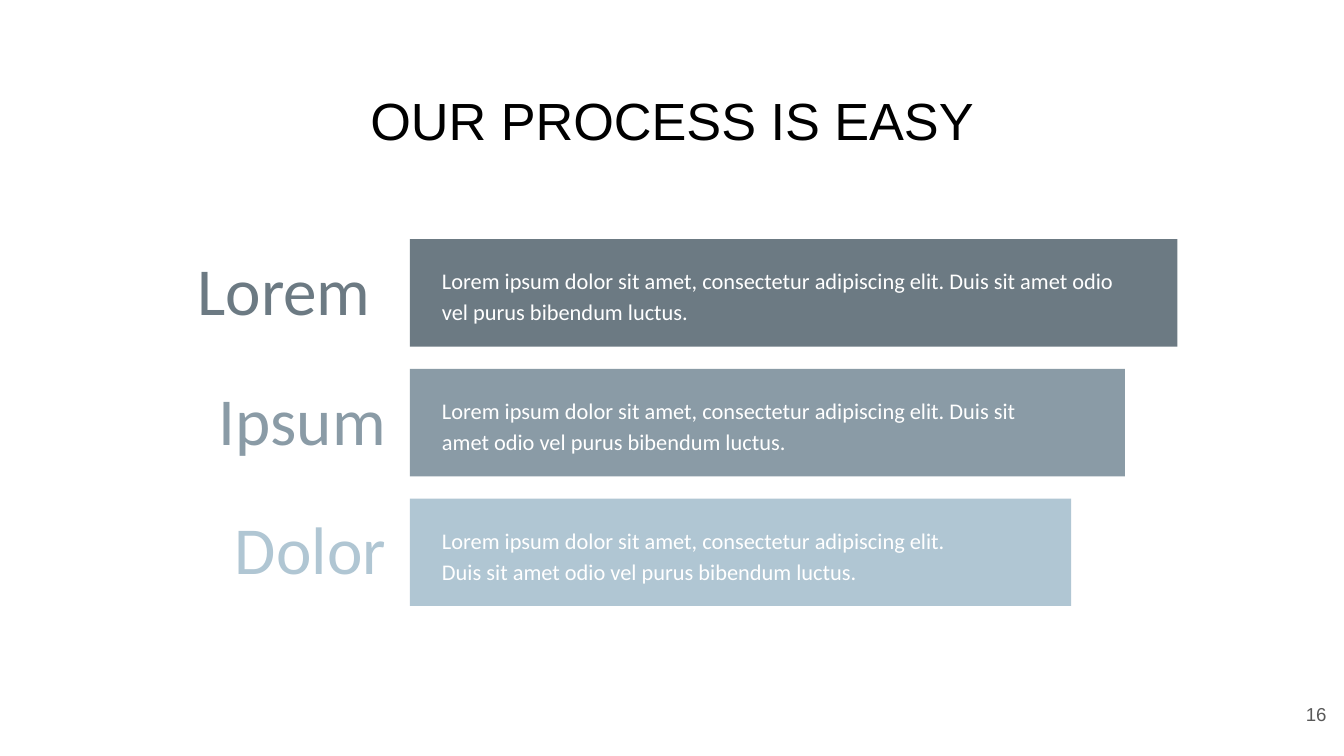
from pptx import Presentation
from pptx.dml.color import RGBColor
from pptx.enum.shapes import MSO_SHAPE
from pptx.enum.text import MSO_ANCHOR, MSO_AUTO_SIZE, PP_ALIGN
from pptx.util import Inches, Pt

RECT = MSO_SHAPE.RECTANGLE
MIDDLE, BOTTOM = MSO_ANCHOR.MIDDLE, MSO_ANCHOR.BOTTOM
LEFT, CENTER, RIGHT = PP_ALIGN.LEFT, PP_ALIGN.CENTER, PP_ALIGN.RIGHT
FIXED = MSO_AUTO_SIZE.NONE

COLORS = {
    "black": "000000",
    "gray": "595959",
    "white": "FFFFFF",
    "dark": "6C7A83",
    "mid": "8A9BA6",
    "light": "B0C6D3",
}
WIDTH = Inches(10)
HEIGHT = WIDTH * 9 // 16
NOTE = ("Lorem ipsum dolor sit amet, consectetur adipiscing elit. "
        "Duis sit amet odio vel purus bibendum luctus.")
# label, color, bar width, note width, note height
STEPS = [
    ("Lorem ", "dark", 5.71, 5.21, 0.63),
    ("Ipsum", "mid", 5.32, 4.78, 0.36),
    ("Dolor", "light", 4.92, 4.21, 0.36),
]
FIRST, LAST = 1.78, 3.71
PITCH = (LAST - FIRST) / (len(STEPS) - 1)
NO_PAD = (0, 0, 0, 0)
PAD = (0.1, 0.05, 0.1, 0.05)


def color(name):
    return RGBColor.from_string(COLORS[name])


def assign(target, values):
    for name, value in values.items():
        setattr(target, name, value)


def write(shape, text, font, size, tint, align, anchor=MIDDLE, pad=PAD, lines=1.0):
    """Fill a text shape with one formatted paragraph."""
    left, top, right, bottom = (Inches(side) for side in pad)
    frame = shape.text_frame
    assign(frame, {
        "word_wrap": True, "auto_size": FIXED, "vertical_anchor": anchor,
        "margin_left": left, "margin_top": top,
        "margin_right": right, "margin_bottom": bottom,
    })
    para = frame.paragraphs[0]
    assign(para, {"alignment": align, "line_spacing": lines})
    run = para.add_run()
    run.text = text
    assign(run.font, {"name": font, "size": Pt(size), "bold": False})
    run.font.color.rgb = color(tint)


def add_title(slide, text):
    title = slide.shapes.title
    assign(title, {"left": Inches(0.34), "top": Inches(0.49),
                   "width": Inches(9.32), "height": Inches(0.63)})
    write(title, text, "Arial", 28, "black", CENTER, BOTTOM, NO_PAD)


def add_text(shapes, place, text, **style):
    box = shapes.add_textbox(*(Inches(size) for size in place))
    write(box, text, **style)


def add_bar(shapes, place, tint):
    bar = shapes.add_shape(RECT, *(Inches(size) for size in place))
    bar.shadow.inherit = False
    bar.fill.solid()
    bar.fill.fore_color.rgb = color(tint)
    bar.line.fill.background()


def add_step(slide, top, label, tint, width, span, tall):
    """Group a label, its bar and the note on the bar."""
    shapes = slide.shapes.add_group_shape().shapes
    add_text(shapes, (0.78, top + 0.06, 2.19, 0.69), label,
             font="Calibri", size=36, tint=tint, align=RIGHT, lines=0.9)
    add_bar(shapes, (3.05, top, width, 0.8), tint)
    add_text(shapes, (3.19, top + 0.41 - tall / 2, span, tall), NOTE,
             font="Calibri", size=12, tint="white", align=LEFT, lines=1.15)


def main():
    deck = Presentation()
    assign(deck, {"slide_width": WIDTH, "slide_height": HEIGHT})
    slide = deck.slides.add_slide(deck.slide_layouts[5])
    add_title(slide, "OUR PROCESS IS EASY")
    add_text(slide.shapes, (9.27, 5.1, 0.6, 0.43), "16",
             font="Arial", size=10, tint="gray", align=RIGHT, pad=NO_PAD)
    for row, step in enumerate(STEPS):
        add_step(slide, FIRST + row * PITCH, *step)
    deck.save("out.pptx")


if __name__ == "__main__":
    main()
